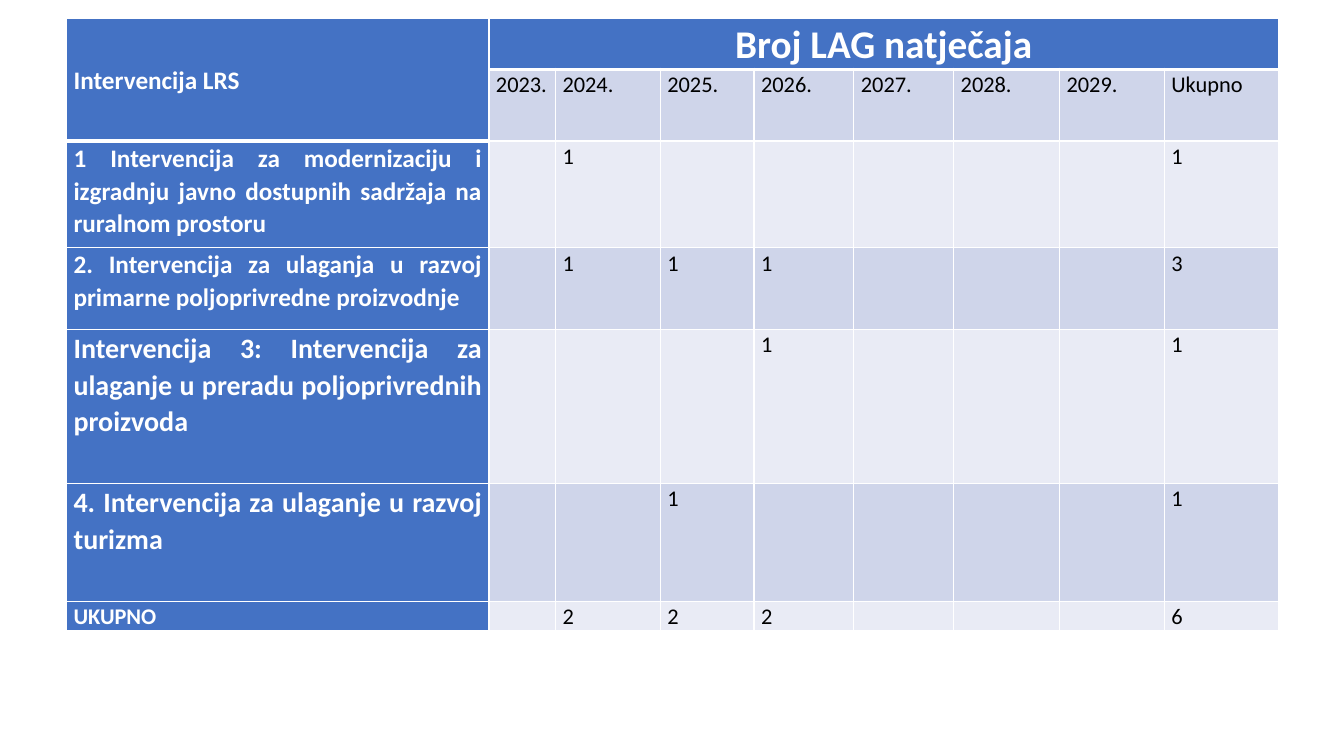
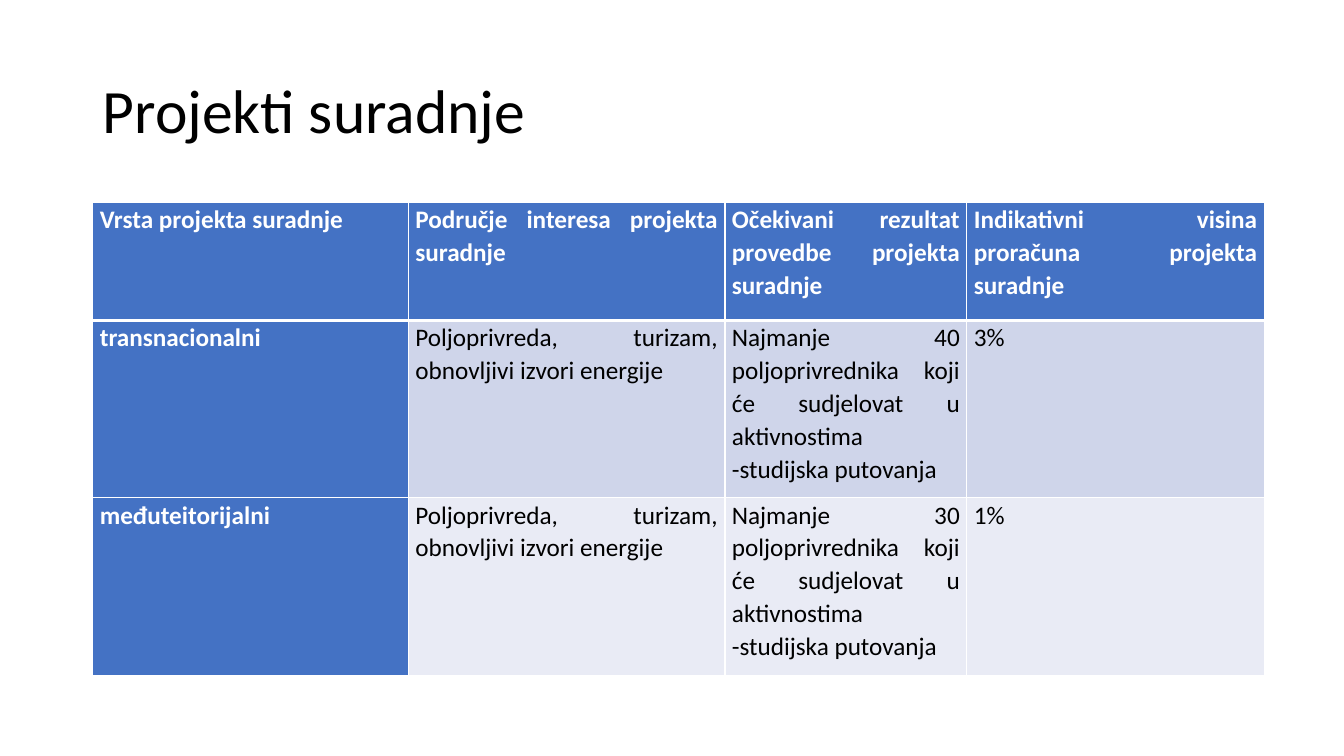
from lxml import etree
from pptx import Presentation
from pptx.dml.color import RGBColor
from pptx.enum.text import MSO_ANCHOR, PP_ALIGN
from pptx.oxml.ns import qn
from pptx.util import Inches, Pt

LEFT, CENTER, JUSTIFY = PP_ALIGN.LEFT, PP_ALIGN.CENTER, PP_ALIGN.JUSTIFY
MIDDLE = MSO_ANCHOR.MIDDLE
TITLE_ONLY, BLANK = 5, 6
FONT = "Calibri"
COLORS = {
    "heading": "4472C4",
    "dark_band": "CFD5EA",
    "light_band": "E9EBF5",
    "white": "FFFFFF",
    "black": "000000",
}
THIN, THICK = 1, 3

CALL_COLUMNS = [4.19, 0.66, 1.04, 0.93, 0.99, 0.99, 1.05, 1.04, 1.13]
CALL_ROWS = [0.5, 0.71, 1.06, 0.81, 1.53, 1.17, 0.29]
CALL_PERIODS = [f"{year}." for year in range(2023, 2030)] + ["Ukupno"]
# Label, label size, number of calls for each period
CALLS = [
    ("1 Intervencija za modernizaciju i izgradnju javno dostupnih sadržaja "
     "na ruralnom prostoru", 18, ["", "1", "", "", "", "", "", "1"]),
    ("2. Intervencija za ulaganja u razvoj primarne poljoprivredne proizvodnje",
     18, ["", "1", "1", "1", "", "", "", "3"]),
    ("Intervencija 3: Intervencija za ulaganje u preradu poljoprivrednih proizvoda",
     20, ["", "", "", "1", "", "", "", "1"]),
    ("4. Intervencija za ulaganje u razvoj turizma",
     20, ["", "", "1", "", "", "", "", "1"]),
    ("UKUPNO", 16, ["", "2", "2", "2", "", "", "", "6"]),
]

PROJECT_COLUMNS = [3.13, 3.14, 2.4, 2.95]
PROJECT_ROWS = [1.17, 1.76, 1.76]
PROJECT_HEADINGS = [
    "Vrsta projekta suradnje",
    "Područje interesa projekta suradnje",
    "Očekivani rezultat provedbe projekta suradnje",
    "Indikativni visina proračuna projekta suradnje",
]
PROJECT_FIELD = "Poljoprivreda, turizam, obnovljivi izvori energije"
# Type, number of farmers, share of the budget
PROJECTS = [("transnacionalni", 40, "3%"), ("međuteitorijalni", 30, "1%")]


def style_run(run, size, color, bold=False):
    run.font.name = FONT
    run.font.size = Pt(size)
    run.font.bold = bold
    run.font.color.rgb = RGBColor.from_string(COLORS[color])


def set_borders(cell, top=THIN, bottom=THIN):
    """Draw white cell borders; must run before the cell gets its fill."""
    properties = cell._tc.get_or_add_tcPr()
    for side, width in (("L", THIN), ("R", THIN), ("T", top), ("B", bottom)):
        line = etree.SubElement(properties, qn(f"a:ln{side}"), w=str(Pt(width)))
        fill = etree.SubElement(line, qn("a:solidFill"))
        etree.SubElement(fill, qn("a:srgbClr"), val=COLORS["white"])


def write_cell(cell, text, size, fill, color="black", bold=False, alignment=JUSTIFY):
    """Fill a cell and write its text; a newline becomes a line break."""
    cell.margin_left = cell.margin_right = Inches(0.07)
    cell.margin_top = cell.margin_bottom = 0
    cell.fill.solid()
    cell.fill.fore_color.rgb = RGBColor.from_string(COLORS[fill])
    paragraph = cell.text_frame.paragraphs[0]
    paragraph.alignment = alignment
    paragraph.line_spacing = 1.07
    paragraph.space_after = Pt(8)
    for index, line in enumerate(text.split("\n")):
        if index:
            paragraph.add_line_break()
        run = paragraph.add_run()
        run.text = line
        style_run(run, size, color, bold)


def write_heading(cell, text, size=18, alignment=JUSTIFY):
    write_cell(cell, text, size, "heading", "white", True, alignment)


def write_values(table, row, values, size):
    """Write the banded cells right of a row heading."""
    band = "dark_band" if row % 2 else "light_band"
    for column, value in enumerate(values, start=1):
        write_cell(table.cell(row, column), value, size, band)


def add_grid(slide, left, top, widths, heights, header_depths):
    """Add a bordered table; header_depths gives the header rows per column."""
    frame = slide.shapes.add_table(
        len(heights), len(widths), Inches(left), Inches(top),
        Inches(sum(widths)), Inches(sum(heights)))
    table = frame.table
    table.first_row = table.horz_banding = False
    for column, width in zip(table.columns, widths):
        column.width = Inches(width)
    for row, height in zip(table.rows, heights):
        row.height = Inches(height)
    for row in range(len(heights)):
        for column, depth in enumerate(header_depths):
            set_borders(table.cell(row, column),
                        top=THICK if row == depth else THIN,
                        bottom=THICK if row < depth else THIN)
    return table


def add_title(slide, text):
    title = slide.shapes.title
    title.left, title.top = Inches(0.92), Inches(0.4)
    title.width, title.height = Inches(11.5), Inches(1.45)
    title.text_frame.vertical_anchor = MIDDLE
    paragraph = title.text_frame.paragraphs[0]
    paragraph.alignment = LEFT
    paragraph.line_spacing = 0.9
    run = paragraph.add_run()
    run.text = text
    style_run(run, 44, "black")


def build_calls_slide(presentation):
    slide = presentation.slides.add_slide(presentation.slide_layouts[BLANK])
    table = add_grid(slide, 0.66, 0.18, CALL_COLUMNS, CALL_ROWS,
                     [2] + [1] * len(CALL_PERIODS))
    corner, banner = table.cell(0, 0), table.cell(0, 1)
    corner.merge(table.cell(1, 0))
    banner.merge(table.cell(0, len(CALL_PERIODS)))
    write_heading(corner, "Intervencija LRS")
    corner.vertical_anchor = MIDDLE
    write_heading(banner, "Broj LAG natječaja", 28, CENTER)
    write_values(table, 1, CALL_PERIODS, 16)
    for row, (label, size, counts) in enumerate(CALLS, start=2):
        write_heading(table.cell(row, 0), label, size)
        write_values(table, row, counts, 16)


def build_projects_slide(presentation):
    slide = presentation.slides.add_slide(presentation.slide_layouts[TITLE_ONLY])
    add_title(slide, "Projekti suradnje")
    table = add_grid(slide, 0.92, 2.01, PROJECT_COLUMNS, PROJECT_ROWS,
                     [1] * len(PROJECT_COLUMNS))
    for column, heading in enumerate(PROJECT_HEADINGS):
        write_heading(table.cell(0, column), heading)
    for row, (kind, farmers, share) in enumerate(PROJECTS, start=1):
        result = (f"Najmanje {farmers} poljoprivrednika koji će sudjelovat u "
                  "aktivnostima\n-studijska putovanja")
        write_heading(table.cell(row, 0), kind)
        write_values(table, row, [PROJECT_FIELD, result, share], 18)


def main():
    presentation = Presentation()
    presentation.slide_width = Inches(13.33)
    presentation.slide_height = Inches(7.5)
    build_calls_slide(presentation)
    build_projects_slide(presentation)
    presentation.save("out.pptx")


if __name__ == "__main__":
    main()
